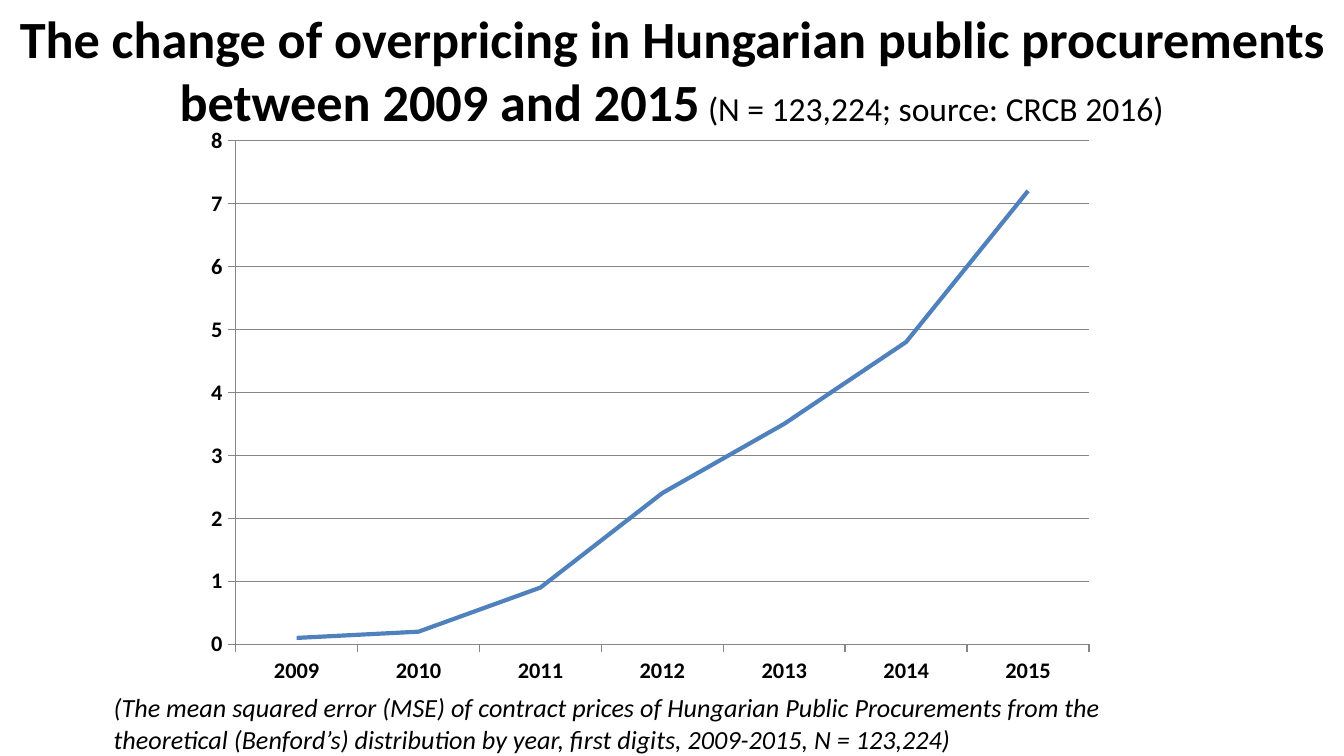
from dataclasses import dataclass

from lxml import etree
from pptx import Presentation
from pptx.chart.data import CategoryChartData
from pptx.dml.color import RGBColor
from pptx.enum import chart as chart_enum
from pptx.enum import text as text_enum
from pptx.util import Cm, Pt

FONT = "Calibri"
BLACK = RGBColor(0x00, 0x00, 0x00)
BLUE = RGBColor(0x4F, 0x81, 0xBD)
GRAY = RGBColor(0x86, 0x86, 0x86)

YEARS = [str(year) for year in range(2009, 2016)]
ERRORS = [0.1, 0.2, 0.9, 2.4, 3.5, 4.8, 7.2]
CHART_NS = "http://schemas.openxmlformats.org/drawingml/2006/chart"


@dataclass(frozen=True)
class Box:
    """A frame in centimetres."""
    left: float
    top: float
    width: float
    height: float

    def lengths(self) -> tuple:
        return Cm(self.left), Cm(self.top), Cm(self.width), Cm(self.height)


@dataclass(frozen=True)
class Span:
    wording: str
    size: float
    bold: bool = False
    italic: bool = False


def style_font(font, size: float, bold: bool = False, italic: bool = False) -> None:
    font.name = FONT
    font.size = Pt(size)
    font.bold = bold
    font.italic = italic
    font.color.rgb = BLACK


def add_paragraph_box(slide, box: Box, spans: list[Span], alignment) -> None:
    frame = slide.shapes.add_textbox(*box.lengths()).text_frame
    frame.word_wrap = True
    paragraph = frame.paragraphs[0]
    paragraph.alignment = alignment
    for span in spans:
        run = paragraph.add_run()
        run.text = span.wording
        style_font(run.font, span.size, span.bold, span.italic)


def style_line(line, color: RGBColor, width: float) -> None:
    line.color.rgb = color
    line.width = Pt(width)


def place_plot(chart, x: float, y: float, w: float, h: float) -> None:
    """Fix the inner plot area as fractions of the chart frame."""
    plot_area = chart.element.find(f".//{{{CHART_NS}}}plotArea")
    for automatic in plot_area.findall(f"{{{CHART_NS}}}layout"):
        plot_area.remove(automatic)
    layout = etree.Element(f"{{{CHART_NS}}}layout")
    manual = etree.SubElement(layout, f"{{{CHART_NS}}}manualLayout")
    settings = {"layoutTarget": "inner", "xMode": "edge", "yMode": "edge",
                "x": x, "y": y, "w": w, "h": h}
    for tag, value in settings.items():
        etree.SubElement(manual, f"{{{CHART_NS}}}{tag}", val=str(value))
    plot_area.insert(0, layout)


def add_overpricing_chart(slide, box: Box) -> None:
    data = CategoryChartData()
    data.categories = YEARS
    data.add_series("Series 1", ERRORS)
    chart = slide.shapes.add_chart(
        chart_enum.XL_CHART_TYPE.LINE, *box.lengths(), data).chart
    chart.has_legend = False
    chart.has_title = False
    style_font(chart.font, 10)
    place_plot(chart, 0.081, 0.049, 0.84, 0.885)

    chart.plots[0].vary_by_categories = False
    errors = chart.plots[0].series[0]
    errors.smooth = False
    errors.marker.style = chart_enum.XL_MARKER_STYLE.NONE
    style_line(errors.format.line, BLUE, 2.25)

    for axis in (chart.category_axis, chart.value_axis):
        axis.major_tick_mark = chart_enum.XL_TICK_MARK.OUTSIDE
        axis.minor_tick_mark = chart_enum.XL_TICK_MARK.NONE
        style_font(axis.tick_labels.font, 12, bold=True)
        style_line(axis.format.line, GRAY, 0.75)
    scale = chart.value_axis
    scale.minimum_scale, scale.maximum_scale, scale.major_unit = 0, 8, 1
    scale.has_major_gridlines = True
    style_line(scale.major_gridlines.format.line, GRAY, 0.75)


def main() -> None:
    deck = Presentation()
    deck.slide_width, deck.slide_height = Cm(25.4), Cm(14.29)
    slide = deck.slides.add_slide(deck.slide_layouts[6])

    add_overpricing_chart(slide, Box(2.9, 2.13, 19.2, 10.8))
    add_paragraph_box(slide, Box(1.9, 12.95, 21.41, 1.45), [
        Span("(The mean squared error (MSE) of contract prices of Hungarian "
             "Public Procurements from the theoretical (Benford’s) distribution "
             "by year, first digits, 2009-2015, N = 123,224)", 14, italic=True),
    ], text_enum.PP_ALIGN.LEFT)
    add_paragraph_box(slide, Box(0, 0, 25.4, 2.64), [
        Span("The change of overpricing in Hungarian public procurements "
             "between 2009 and 2015", 28, bold=True),
        Span(" ", 20, bold=True),
        Span("(N = 123,224; source: CRCB 2016)", 18),
    ], text_enum.PP_ALIGN.CENTER)

    deck.save("out.pptx")


if __name__ == "__main__":
    main()
